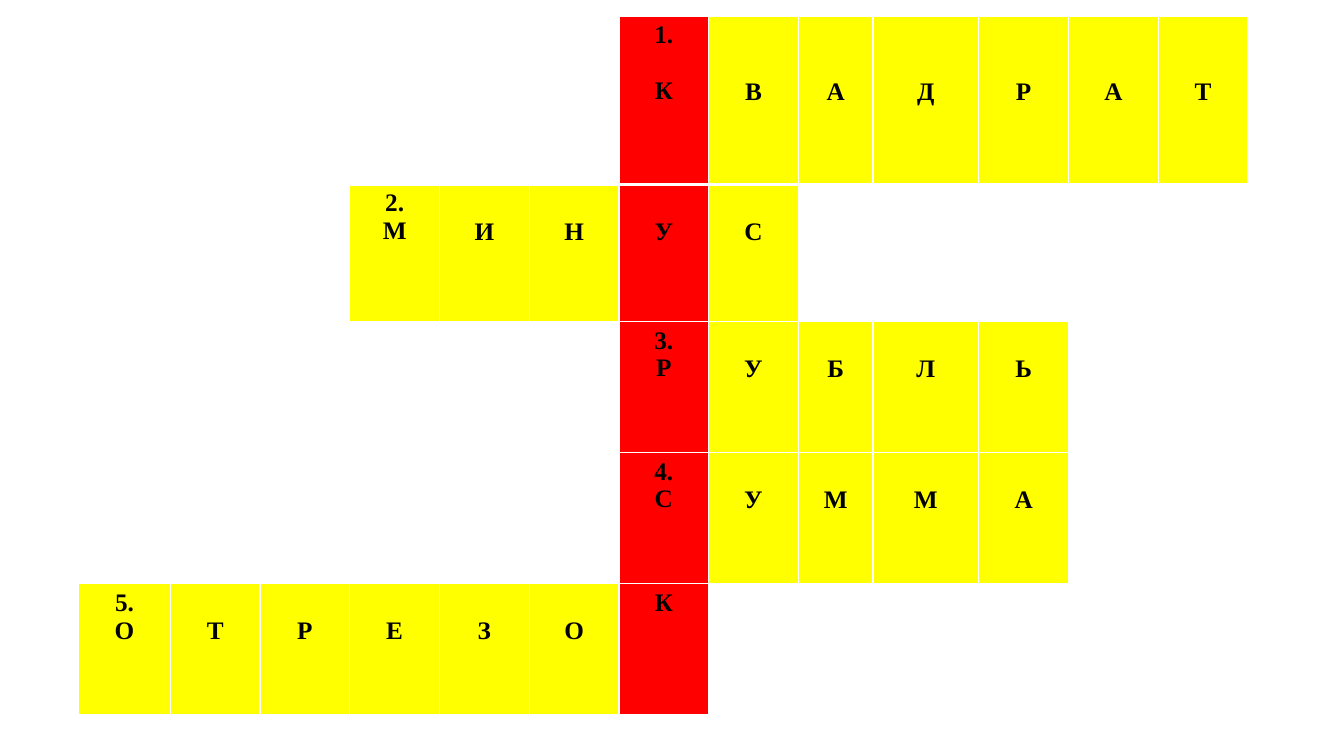
from lxml.etree import SubElement
from pptx import Presentation
from pptx.dml.color import RGBColor
from pptx.enum.text import PP_ALIGN
from pptx.oxml.ns import qn
from pptx.util import Inches, Pt

COLORS = {"key": "FF0000", "letter": "FFFF00", "border": "FFFFFF", "text": "000000"}
FONT = {"name": "Times New Roman", "size": Pt(18), "bold": True}

COLUMN_WIDTHS = [0.91] + [0.89] * 7 + [0.74, 1.05] + [0.89] * 3
ROW_HEIGHTS = [1.67, 1.36] + [1.3] * 3
KEY_COLUMN = 6
LINE_HEIGHT = 0.28
TOP_MARGIN = 0.05

# Word, its first column, and how many lines down its letters stand
WORDS = [
    ("КВАДРАТ", 6, 2),
    ("МИНУС", 3, 1),
    ("РУБЛЬ", 6, 1),
    ("СУММА", 6, 1),
    ("ОТРЕЗОК", 0, 1),
]


def set_borders(cell, widths):
    """Draw the left, right, top and bottom borders of a cell."""
    properties = cell._tc.get_or_add_tcPr()
    for position, (side, width) in enumerate(widths.items()):
        line = SubElement(properties, qn(f"a:{side}"), w=str(Pt(width)))
        fill = SubElement(line, qn("a:solidFill"))
        SubElement(fill, qn("a:srgbClr"), val=COLORS["border"])
        properties.insert(position, line)


def write_paragraph(para, text):
    para.alignment = PP_ALIGN.CENTER
    span = para.add_run()
    span.text = text
    for attribute, value in FONT.items():
        setattr(span.font, attribute, value)
    span.font.color.rgb = RGBColor.from_string(COLORS["text"])


def fill_letter(cell, letter, number, depth, color):
    """Put a letter in its square, under the clue number if it has one."""
    cell.fill.solid()
    cell.fill.fore_color.rgb = RGBColor.from_string(COLORS[color])
    frame = cell.text_frame
    para = frame.paragraphs[0]
    if number:
        write_paragraph(para, f"{number}.")
        para = frame.add_paragraph()
        para.space_before = Inches((depth - 1) * LINE_HEIGHT)
    else:
        cell.margin_top = Inches(TOP_MARGIN + depth * LINE_HEIGHT)
    write_paragraph(para, letter)


def add_crossword(page, left, top):
    width, height = sum(COLUMN_WIDTHS), sum(ROW_HEIGHTS)
    table = page.shapes.add_table(
        len(ROW_HEIGHTS), len(COLUMN_WIDTHS),
        Inches(left), Inches(top), Inches(width), Inches(height),
    ).table
    table.first_row = table.horz_banding = False
    for column, size in zip(table.columns, COLUMN_WIDTHS):
        column.width = Inches(size)
    for row, size in zip(table.rows, ROW_HEIGHTS):
        row.height = Inches(size)

    # Empty grid, with a thicker line under the first row
    for index, row in enumerate(table.rows):
        widths = {"lnL": 1, "lnR": 1, "lnT": 3 if index == 1 else 1,
                  "lnB": 3 if index == 0 else 1}
        for cell in row.cells:
            cell.fill.background()
            set_borders(cell, widths)

    # Words
    for row, (word, start, word_depth) in enumerate(WORDS):
        for offset, letter in enumerate(word):
            column = start + offset
            number = row + 1 if offset == 0 else None
            # The last key letter stands at the top of its square
            last_key = row == len(WORDS) - 1 and column == KEY_COLUMN
            depth = 0 if last_key else word_depth
            color = "key" if column == KEY_COLUMN else "letter"
            fill_letter(table.cell(row, column), letter, number, depth, color)


def main():
    deck = Presentation()
    deck.slide_width, deck.slide_height = Inches(13.33), Inches(7.5)
    page = deck.slides.add_slide(deck.slide_layouts[6])
    add_crossword(page, 0.78, 0.16)
    deck.save("out.pptx")


if __name__ == "__main__":
    main()
